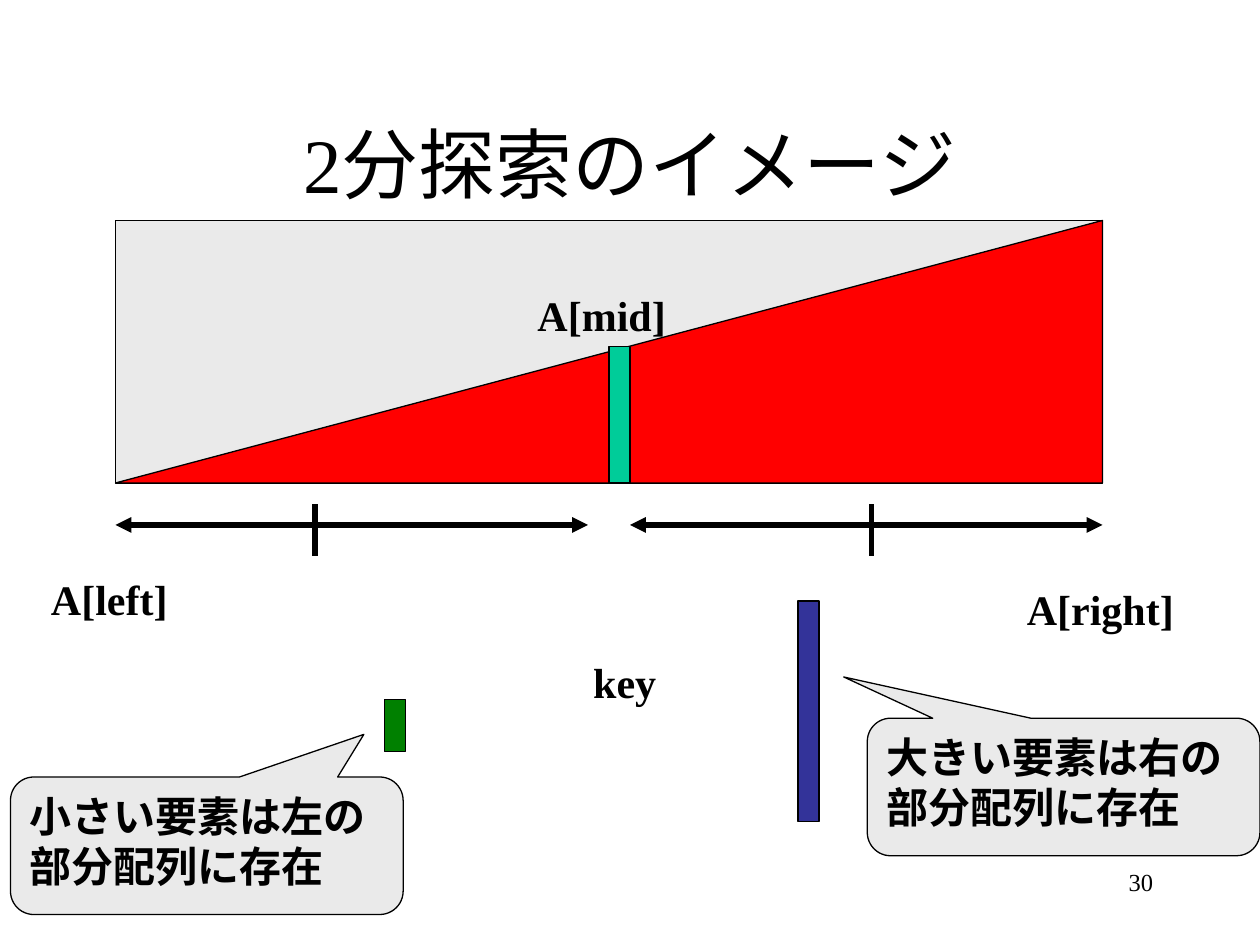
"""Build a slide that pictures binary search on a sorted array."""
from dataclasses import dataclass

from lxml.etree import SubElement
from pptx import Presentation
from pptx.dml.color import RGBColor
from pptx.enum.shapes import MSO_CONNECTOR as Conn, MSO_SHAPE as Shape
from pptx.enum.text import MSO_ANCHOR as Anchor, MSO_AUTO_SIZE as Auto, PP_ALIGN as Align
from pptx.oxml.ns import qn
from pptx.util import Inches, Pt


@dataclass(frozen=True)
class Theme:
    font: str = "Times New Roman"
    ink: str = "000000"
    pale: str = "EAEAEA"
    ramp: str = "FF0000"
    mid: str = "00CC99"
    big: str = "333399"
    small: str = "008000"
    title: int = 44
    body: int = 24
    page: int = 14
    thin: float = 0.75
    thick: float = 3


THEME = Theme()
SIZE = (10, 7.5)
CELL = Inches(1) / 12

TITLE = ("2分探索のイメージ", (9, 8, 102, 15))
PAGE = ("30", (86, 82, 25, 6))
ARRAY = (11, 21, 94, 25)
BARS = [
    (THEME.mid, (58, 33, 2, 13)),
    (THEME.big, (76, 57.25, 2, 21)),
    (THEME.small, (36.6, 66.6, 2, 5)),
]
SPANS = [(11, 56), (60, 105)]
TICKS = [30, 83]
AXIS, TICK_TOP, TICK_END = 50, 48, 53
LABELS = [
    ("A[mid]", (50, 27, 14.6, 6)),
    ("A[left]", (3.6, 54, 13.6, 6)),
    ("A[right]", (96.6, 55, 16.4, 6)),
    ("key", (55.3, 61.9, 8.4, 6)),
]
NOTES = [
    ("小さい要素は左の部分配列に存在", (1, 74, 37.4, 13.1), (0.4, -0.81, 0.17)),
    ("大きい要素は右の部分配列に存在", (82.6, 68.4, 37.4, 13.1), (-0.56, -0.8, 0.17)),
]


def grid(*cells):
    return [round(n * CELL) for n in cells]


def tint(name):
    return RGBColor.from_string(name)


def write(frame, text, size, align, bold=False):
    para = frame.paragraphs[0]
    para.text = text
    para.alignment = align
    font = para.font
    font.name, font.size, font.bold = THEME.font, Pt(size), bold
    font.color.rgb = tint(THEME.ink)


def paint(shape, fill):
    shape.shadow.inherit = False
    shape.fill.solid()
    shape.fill.fore_color.rgb = tint(fill)
    shape.line.color.rgb = tint(THEME.ink)
    shape.line.width = Pt(THEME.thin)


def block(slide, kind, box, fill):
    shape = slide.shapes.add_shape(kind, *grid(*box))
    paint(shape, fill)
    return shape


def label(slide, text, box, size, align, bold=False, wrap=True):
    frame = slide.shapes.add_textbox(*grid(*box)).text_frame
    frame.word_wrap = wrap
    write(frame, text, size, align, bold)
    return frame


def rule(slide, ends, heads=False):
    line = slide.shapes.add_connector(Conn.STRAIGHT, *grid(*ends))
    line.line.color.rgb = tint(THEME.ink)
    line.line.width = Pt(THEME.thick)
    props = line._element.spPr
    if heads:
        for end in ("a:headEnd", "a:tailEnd"):
            SubElement(props.find(qn("a:ln")), qn(end), type="triangle")
    SubElement(props, qn("a:effectLst"))


def ramp(slide):
    left, top, wide, high = ARRAY
    right, base = left + wide, top + high
    pen = slide.shapes.build_freeform(*grid(left, base))
    pen.add_line_segments([grid(right, top), grid(right, base)], close=True)
    paint(pen.convert_to_shape(), THEME.ramp)


def main():
    deck = Presentation()
    deck.slide_width, deck.slide_height = map(Inches, SIZE)
    slide = deck.slides.add_slide(deck.slide_layouts[6])

    label(slide, *PAGE, THEME.page, Align.RIGHT)
    head = label(slide, *TITLE, THEME.title, Align.CENTER)
    head.vertical_anchor = Anchor.MIDDLE

    block(slide, Shape.RECTANGLE, ARRAY, THEME.pale)
    ramp(slide)
    for fill, box in BARS:
        block(slide, Shape.RECTANGLE, box, fill)
    for start, stop in SPANS:
        rule(slide, (start, AXIS, stop, AXIS), heads=True)
    for x in TICKS:
        rule(slide, (x, TICK_TOP, x, TICK_END))
    for text, box in LABELS:
        frame = label(slide, text, box, THEME.body, Align.CENTER, bold=True, wrap=False)
        frame.auto_size = Auto.SHAPE_TO_FIT_TEXT
    for text, box, shifts in NOTES:
        note = block(slide, Shape.ROUNDED_RECTANGULAR_CALLOUT, box, THEME.pale)
        for i, shift in enumerate(shifts):
            note.adjustments[i] = shift
        note.text_frame.word_wrap = True
        note.text_frame.vertical_anchor = Anchor.TOP
        write(note.text_frame, text, THEME.body, Align.LEFT, bold=True)

    deck.save("out.pptx")


if __name__ == "__main__":
    main()
